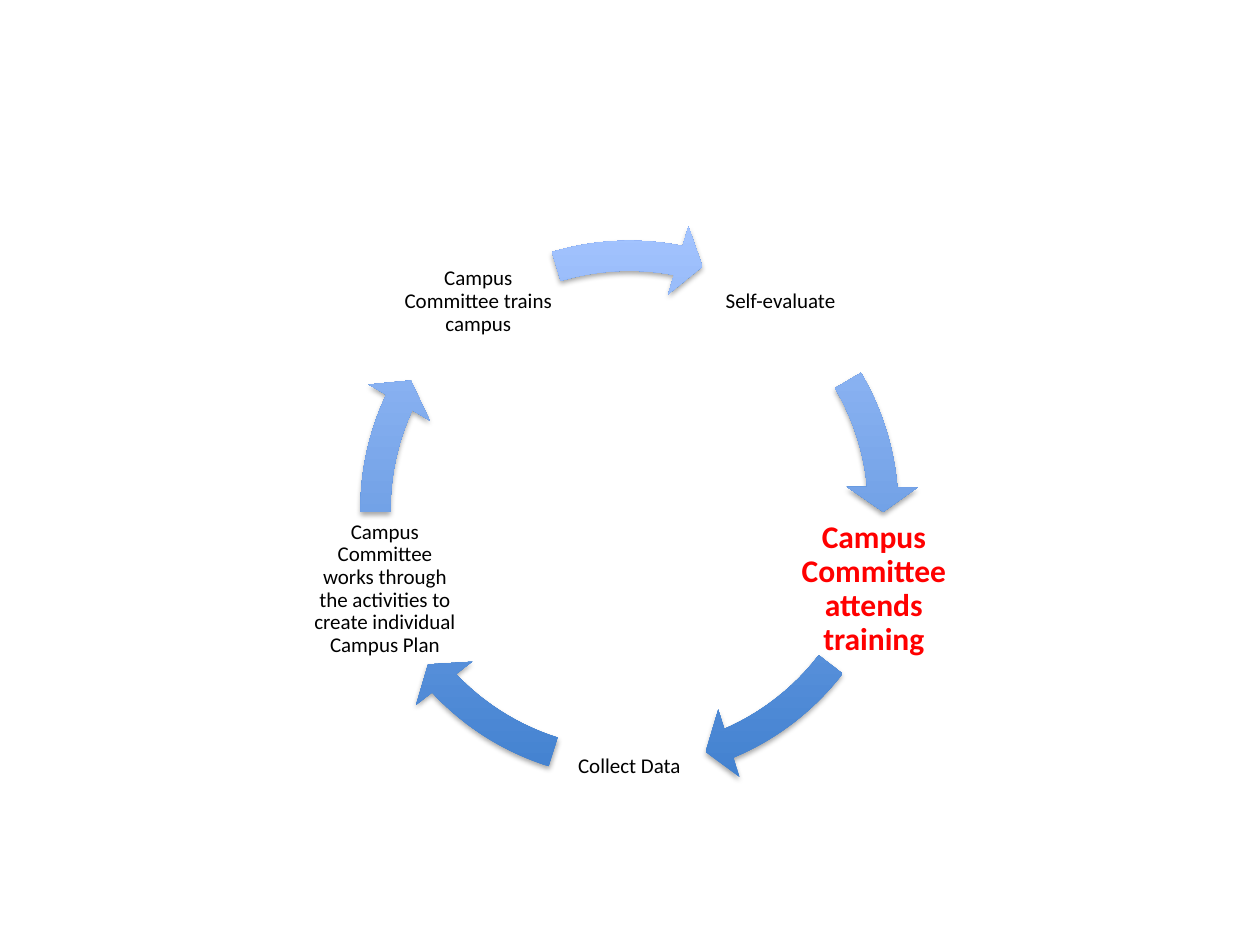
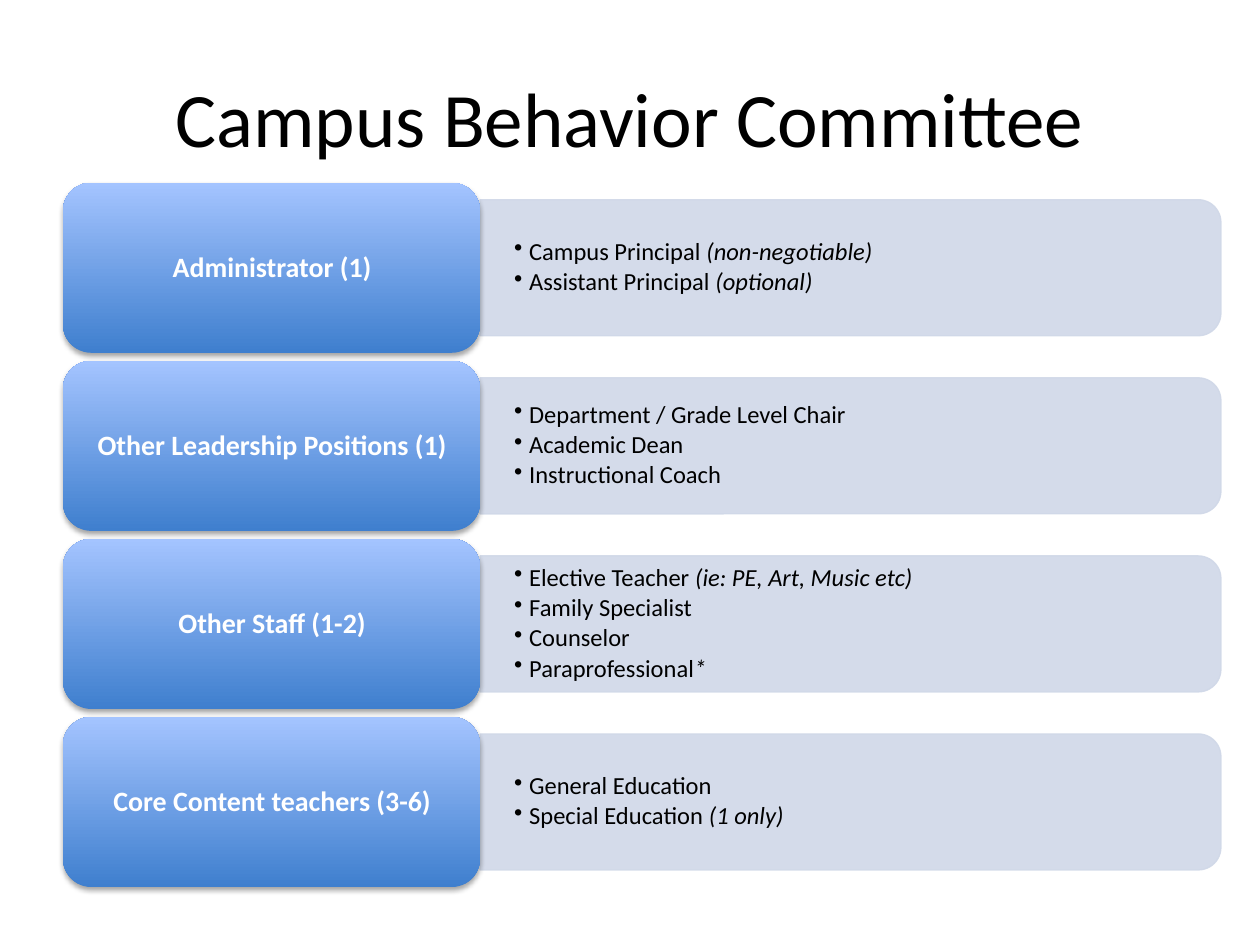
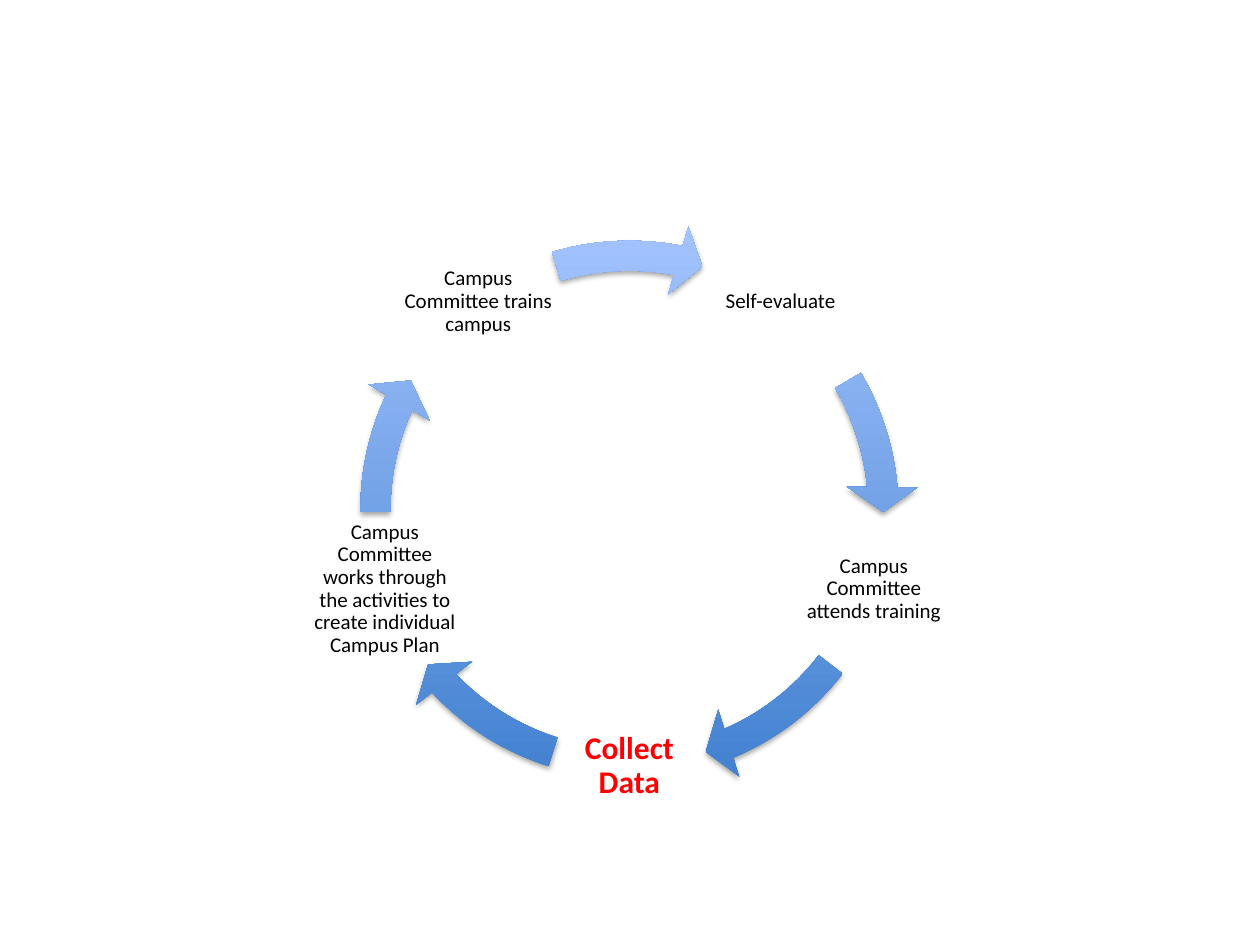
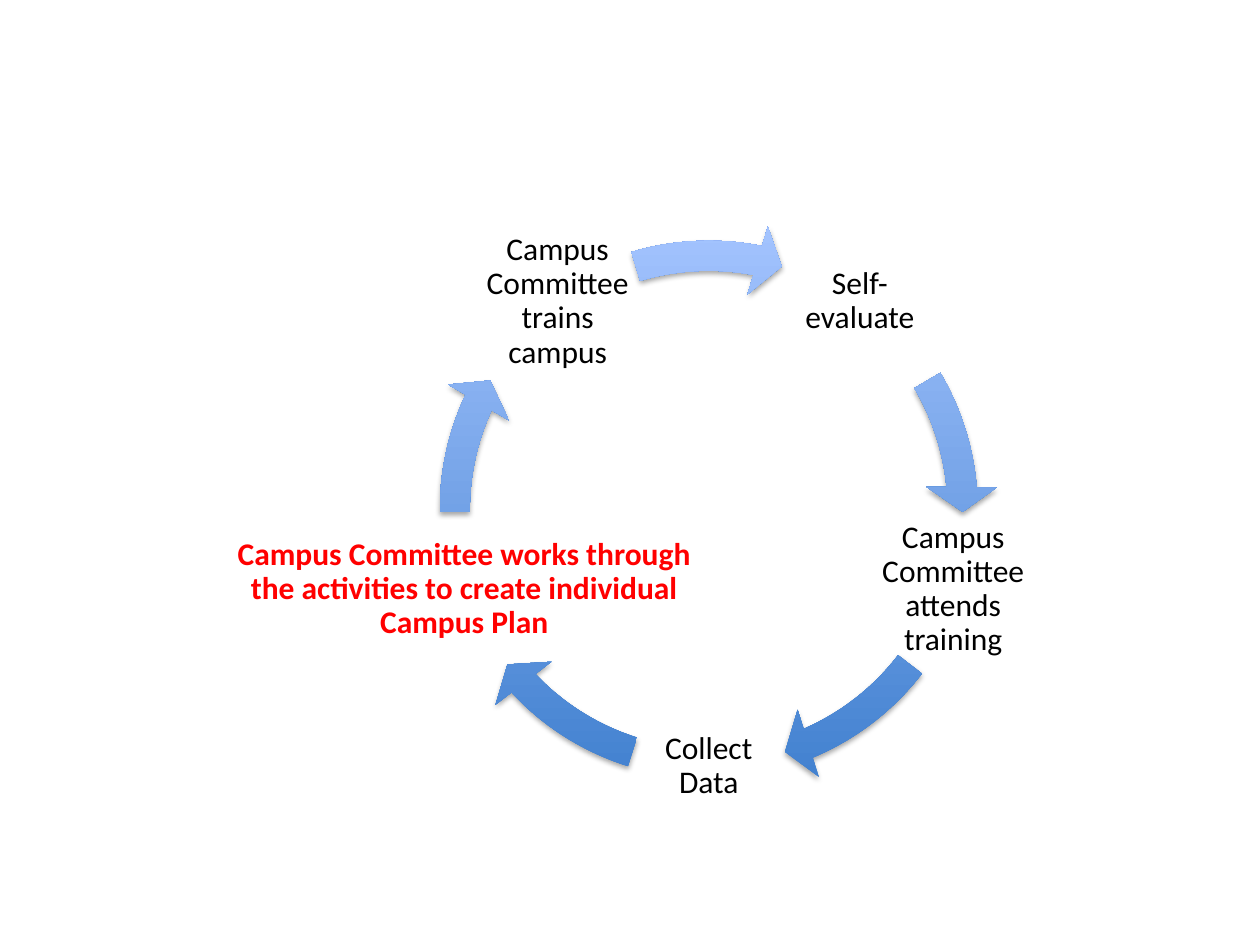
from dataclasses import dataclass
from math import cos, radians, sin

from lxml.etree import SubElement
from pptx import Presentation
from pptx.dml.color import RGBColor
from pptx.enum.shapes import MSO_SHAPE
from pptx.enum.text import MSO_ANCHOR, PP_ALIGN
from pptx.oxml.ns import qn
from pptx.util import Inches, Pt


@dataclass(frozen=True)
class Theme:
    """Colours, font and type sizes of the deck."""
    font: str = "Calibri"
    ink: str = "000000"
    hot: str = "FF0000"
    white: str = "FFFFFF"
    deep: str = "3F7FCE"
    light: str = "A4C4FF"
    pale: str = "D0D8E8"
    title: int = 44
    large: int = 18
    label: int = 16
    item: int = 14
    small: int = 12


@dataclass(frozen=True)
class Box:
    """A region in inches."""
    left: float
    top: float
    width: float
    height: float

    def emu(self):
        """Return the four lengths for python-pptx."""
        return [Inches(n) for n in (self.left, self.top, self.width, self.height)]


THEME = Theme()
STEPS = [
    "Self-evaluate",
    "Campus Committee attends training",
    "Collect Data",
    "Campus Committee works through the activities to create individual Campus Plan",
    "Campus Committee trains campus",
]
ARCS = [(329.43, 354.9), (37.55, 66.93), (107.48, 136.86), (179.5, 204.98), (253.3, 281.11)]
ROLES = [
    ("Administrator (1)", [("Campus Principal ", "(non-negotiable)"),
                           ("Assistant Principal ", "(optional)")]),
    ("Other Leadership Positions (1)", [("Department / Grade Level Chair", ""),
                                        ("Academic Dean", ""),
                                        ("Instructional Coach", "")]),
    ("Other Staff (1-2)", [("Elective Teacher ", "(ie: PE, Art, Music etc)"),
                           ("Family Specialist", ""),
                           ("Counselor", ""),
                           ("Paraprofessional", "*")]),
    ("Core Content teachers (3-6)", [("General Education", ""),
                                     ("Special Education ", "(1 only)")]),
]


def add_frame(shapes, box, pad):
    """Add a wrapping, middle-anchored text box with (x, y) insets."""
    frame = shapes.add_textbox(*box.emu()).text_frame
    frame.word_wrap = True
    frame.vertical_anchor = MSO_ANCHOR.MIDDLE
    frame.margin_left = frame.margin_right = Inches(pad[0])
    frame.margin_top = frame.margin_bottom = Inches(pad[1])
    return frame


def style(para, size, color=THEME.ink, bold=False, after=0.35, lines=0.9):
    """Set the font and spacing of a paragraph."""
    para.line_spacing = lines
    para.space_after = Pt(size * after)
    font = para.font
    font.name, font.size, font.bold = THEME.font, Pt(size), bold
    font.color.rgb = RGBColor.from_string(color)


def add_text(shapes, box, text, pad, size, **look):
    """Add one centred paragraph."""
    para = add_frame(shapes, box, pad).paragraphs[0]
    para.text = text
    para.alignment = PP_ALIGN.CENTER
    style(para, size, **look)


def add_list(shapes, box, items):
    """Add bullets, each with a plain part and an italic part."""
    frame = add_frame(shapes, box, (0.27, 0.14))
    for i, (plain, note) in enumerate(items):
        para = frame.add_paragraph() if i else frame.paragraphs[0]
        para.level = 1
        props = para._p.get_or_add_pPr()
        props.set("marL", str(Inches(0.12)))
        props.set("indent", str(Inches(-0.12)))
        SubElement(props, qn("a:buChar"), char="•")
        style(para, THEME.item, after=0.15)
        para.add_run().text = plain
        if note:
            run = para.add_run()
            run.text = note
            run.font.italic = True


def add_glossy(shapes, kind, box):
    """Add a shape with the blue gradient and a soft shadow."""
    shape = shapes.add_shape(kind, *box.emu())
    shape.line.fill.background()
    shape.fill.gradient()
    shape.fill.gradient_angle = 90
    for stop, color in zip(shape.fill.gradient_stops, (THEME.deep, THEME.light)):
        stop.color.rgb = RGBColor.from_string(color)
    shape.shadow.inherit = False
    effects = shape.element.spPr.find(qn("a:effectLst"))
    shade = SubElement(effects, qn("a:outerShdw"), blurRad=str(Pt(3.1)),
                       dist=str(Pt(1.8)), dir="5400000", rotWithShape="0")
    color = SubElement(shade, qn("a:srgbClr"), val=THEME.ink)
    SubElement(color, qn("a:alpha"), val="35000")
    return shape


def add_bar(shapes, box):
    """Add a pale bar with rounded right corners."""
    mid_x, mid_y = box.left + box.width / 2, box.top + box.height / 2
    turned = Box(mid_x - box.height / 2, mid_y - box.width / 2, box.height, box.width)
    bar = shapes.add_shape(MSO_SHAPE.ROUND_2_SAME_RECTANGLE, *turned.emu())
    bar.rotation = 90
    bar.shadow.inherit = False
    bar.fill.solid()
    bar.line.width = Pt(0.75)
    for part in (bar.fill.fore_color, bar.line.color):
        part.rgb = RGBColor.from_string(THEME.pale)
    for color in bar.element.spPr.iter(qn("a:srgbClr")):
        SubElement(color, qn("a:alpha"), val="90000")


def draw_cycle(slide, box, size, hot, wide=1.22):
    """Draw the ring of steps with the hot step in red, as wide as given."""
    shapes = slide.shapes.add_group_shape().shapes
    tall, reach = 1.22, 2.04
    for i, (step, (start, end)) in enumerate(zip(STEPS, ARCS)):
        turn = radians(72 * i - 54)
        width = wide if i == hot else tall
        place = Box(box.left + box.width / 2 + reach * cos(turn) - width / 2,
                    box.top + box.height / 2 + reach * sin(turn) - tall / 2, width, tall)
        points = THEME.large if i == hot else size
        add_text(shapes, place, step, (points / 600, points / 600), points,
                 color=THEME.hot if i == hot else THEME.ink, bold=i == hot)
        arrow = add_glossy(shapes, MSO_SHAPE.CIRCULAR_ARROW, box)
        values = (5.2 / 100, 5.6 * 0.6, end * 0.6, start * 0.6, 6.1 / 100)
        for n, value in enumerate(values):
            arrow.adjustments[n] = value


def draw_roles(slide, box):
    """Draw one row for each role: a blue label and its bar of bullets."""
    shapes = slide.shapes.add_group_shape().shapes
    wide, tall = 3.31, 1.35
    pitch = (box.height - tall) / (len(ROLES) - 1)
    for i, (role, items) in enumerate(ROLES):
        top = box.top + i * pitch
        left = box.left + wide
        add_bar(shapes, Box(left, top + tall * 0.1, box.width - wide, tall * 0.8))
        add_list(shapes, Box(left, top + 0.19, box.width - wide - 0.05, 0.97), items)
        add_glossy(shapes, MSO_SHAPE.ROUNDED_RECTANGLE, Box(box.left, top, wide, tall))
        inner = Box(box.left + 0.07, top + 0.07, wide - 0.13, tall - 0.13)
        add_text(shapes, inner, role, (0.07, 0.03), THEME.label,
                 color=THEME.white, bold=True)


def main():
    """Build the four slides."""
    deck = Presentation()
    deck.slide_width, deck.slide_height = Inches(10), Inches(7.5)
    first, team, third, last = [deck.slides.add_slide(deck.slide_layouts[6])
                                for _ in range(4)]
    ring = Box(2.7, 1.75, 4.59, 4.59)
    draw_cycle(first, ring, THEME.small, hot=1)
    add_text(team.shapes, Box(0.5, 0.3, 9, 1.25), "Campus Behavior Committee",
             (0.1, 0.05), THEME.title, after=0, lines=1.0)
    draw_roles(team, Box(0.5, 1.45, 9.19, 5.59))
    draw_cycle(third, ring, THEME.small, hot=2)
    draw_cycle(last, Box(3.33, 1.75, 4.59, 4.59), THEME.large, hot=3, wide=3.71)
    deck.save("out.pptx")


if __name__ == "__main__":
    main()
